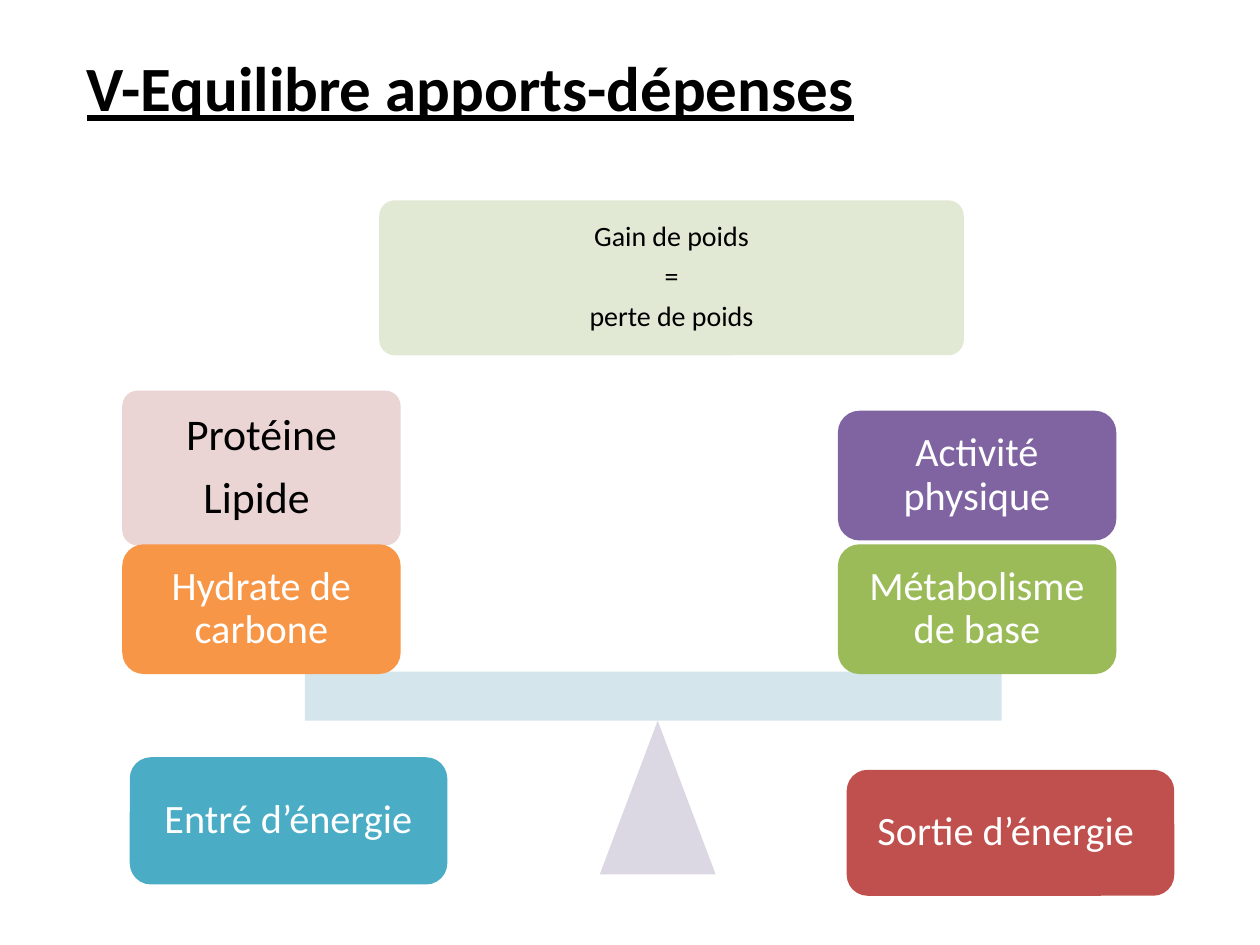
from lxml.etree import SubElement
from pptx import Presentation
from pptx.dml.color import RGBColor
from pptx.enum.shapes import MSO_SHAPE
from pptx.enum.text import MSO_ANCHOR, PP_ALIGN
from pptx.oxml.ns import qn
from pptx.util import Inches, Pt

BLACK = RGBColor(0x00, 0x00, 0x00)
WHITE = RGBColor(0xFF, 0xFF, 0xFF)
ROSE = RGBColor(0xE8, 0xD0, 0xD0)
SAGE = RGBColor(0xDE, 0xE7, 0xD1)
LILAC = RGBColor(0xD8, 0xD3, 0xE0)
SKY = RGBColor(0xD0, 0xE3, 0xEA)
RED = RGBColor(0xC0, 0x50, 0x4D)
GREEN = RGBColor(0x9B, 0xBB, 0x59)
PURPLE = RGBColor(0x80, 0x64, 0xA2)
TEAL = RGBColor(0x4B, 0xAC, 0xC6)
ORANGE = RGBColor(0xF7, 0x96, 0x46)

ROUND = MSO_SHAPE.ROUNDED_RECTANGLE
LEFT, RIGHT = 0.97, 6.65
UPPER, LOWER = 3.26, 4.32
WIDE, HIGH = 2.21, 1.03


def set_text(par, text, align, **font):
    par.alignment = align
    par.line_spacing = 0.9
    run = par.add_run()
    run.text = text
    run.font.color.rgb = font.pop("color")
    for name, value in font.items():
        setattr(run.font, name, value)


def add_part(kind, box, color, pale=False):
    part = slide.shapes.add_shape(kind, *map(Inches, box))
    part.shadow.inherit = False
    part.fill.solid()
    part.fill.fore_color.rgb = color
    part.line.fill.background()
    if pale:
        tint = part.fill._xPr.find(qn("a:solidFill"))[0]
        SubElement(tint, qn("a:alpha")).set("val", "90000")
    return part


deck = Presentation()
deck.slide_width, deck.slide_height = Inches(10), Inches(7.5)
slide = deck.slides.add_slide(deck.slide_layouts[5])

title = slide.shapes.title
place = {"left": 0.59, "top": 0, "width": 8.62, "height": 1.45}
for name, value in place.items():
    setattr(title, name, Inches(value))
title.text_frame.vertical_anchor = MSO_ANCHOR.MIDDLE
set_text(title.text_frame.paragraphs[0], "V-Equilibre apports-dépenses",
         PP_ALIGN.LEFT, name="Calibri", size=Pt(36), bold=True,
         underline=True, color=BLACK)

# Beam and pivot of the scale
add_part(MSO_SHAPE.ISOSCELES_TRIANGLE, (4.76, 5.72, 0.92, 1.22), LILAC, True)
add_part(MSO_SHAPE.RECTANGLE, (2.42, 5.33, 5.53, 0.39), SKY, True)

# Box, fill, pale, text size, lines
cards = [
    ((LEFT, 3.1, WIDE, 1.23), ROSE, True, 25, ["Protéine", "Lipide "]),
    ((3.01, 1.59, 4.64, 1.23), SAGE, True, 16,
     ["Gain de poids", "=", " perte de poids "]),
    ((6.72, 6.11, 2.6, 1), RED, False, 23, ["Sortie d’énergie "]),
    ((RIGHT, LOWER, WIDE, HIGH), GREEN, False, 23, ["Métabolisme de base"]),
    ((RIGHT, UPPER, WIDE, HIGH), PURPLE, False, 23, ["Activité physique"]),
    ((1.03, 6.01, 2.52, 1.01), TEAL, False, 23, ["Entré d’énergie"]),
    ((LEFT, LOWER, WIDE, HIGH), ORANGE, False, 23, ["Hydrate de carbone"]),
]
for box, color, pale, size, lines in cards:
    card = add_part(ROUND, box, color, pale)
    if pale:
        card.adjustments[0] = 0.1
    frame = card.text_frame
    frame.word_wrap = True
    frame.vertical_anchor = MSO_ANCHOR.MIDDLE
    for side in ("left", "top", "right", "bottom"):
        setattr(frame, f"margin_{side}", Inches(0.05))
    for i, line in enumerate(lines):
        par = frame.add_paragraph() if i else frame.paragraphs[0]
        par.space_after = Pt(round(size * 0.35, 1))
        set_text(par, line, PP_ALIGN.CENTER, name="Calibri", size=Pt(size),
                 color=BLACK if pale else WHITE)

deck.save("out.pptx")
